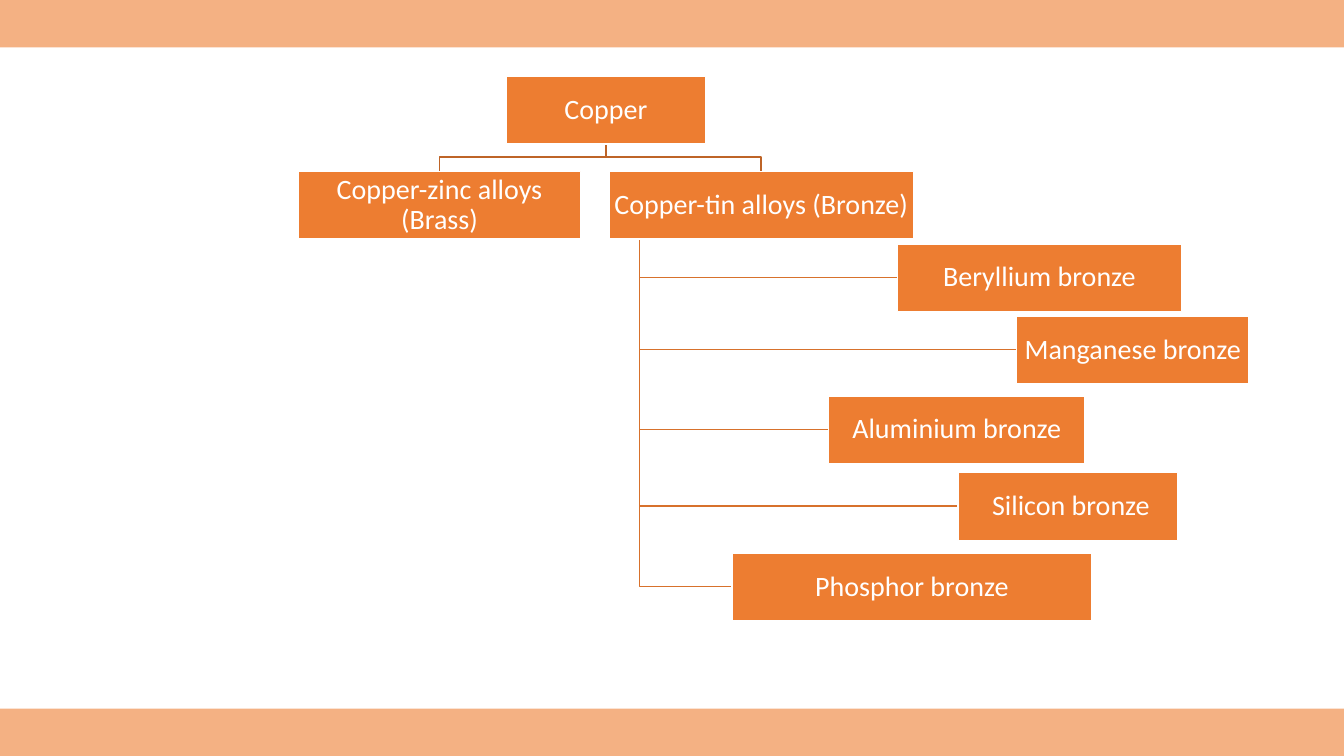
from pptx import Presentation
from pptx.dml.color import RGBColor
from pptx.enum.shapes import MSO_SHAPE
from pptx.enum.text import MSO_ANCHOR, PP_ALIGN
from pptx.util import Inches, Pt

prs = Presentation()
prs.slide_width, prs.slide_height = Inches(13.33), Inches(7.5)
s = prs.slides.add_slide(prs.slide_layouts[6])

# The slide is a grid of 1333 columns by 750 rows
COLS, ROWS = 1333, 750
CELL = prs.slide_height // ROWS
BAND_H, BOX_H = 47, 67
ROOT_Y, ALLOY_Y = 76, 170

TEXT_FRAME = dict(word_wrap=True, vertical_anchor=MSO_ANCHOR.MIDDLE,
                  margin_left=CELL, margin_right=CELL,
                  margin_top=CELL, margin_bottom=CELL)
PARAGRAPH = dict(alignment=PP_ALIGN.CENTER, line_spacing=0.9)
FONT = dict(name="Calibri", size=Pt(20))


def paint(fmt, color):
    """Give a fill, or the fill of a line, one solid colour."""
    fmt.solid()
    fmt.fore_color.rgb = RGBColor.from_string(color)


def add_box(x, y, w, h, color):
    sp = s.shapes.add_shape(MSO_SHAPE.RECTANGLE, *(v * CELL for v in (x, y, w, h)))
    sp.shadow.inherit = False
    paint(sp.fill, color)
    sp.line.fill.background()
    return sp


for y in (0, ROWS - BAND_H):
    add_box(0, y, COLS, BAND_H, "F4B183")

# Text, left, top, width
root = ("Copper", 502, ROOT_Y, 198)
alloys = [
    ("Copper-zinc alloys (Brass)", 296, ALLOY_Y, 280),
    ("Copper-tin alloys (Bronze)", 604, ALLOY_Y, 302),
]
bronzes = [
    ("Beryllium bronze", 890, 242, 282),
    ("Manganese bronze", 1008, 314, 231),
    ("Aluminium bronze", 822, 393, 254),
    (" Silicon bronze", 950, 469, 218),
    ("Phosphor bronze", 726, 549, 357),
]

# Elbows: the bronzes hang from a trunk one tenth into the bronze box
trunk_x = alloys[1][1] + alloys[1][3] // 10
root_x = root[1] + root[3] // 2
root_end = ROOT_Y + BOX_H
mid_y = (root_end + ALLOY_Y) // 2
elbows = []
for text, x, y, w in reversed(bronzes):
    side_y = y + BOX_H // 2
    elbows.append(("D7712C", [(trunk_x, ALLOY_Y + BOX_H), (trunk_x, side_y), (x, side_y)]))
for text, x, y, w in reversed(alloys):
    alloy_x = x + w // 2
    elbows.append(("BE6427", [(root_x, root_end), (root_x, mid_y),
                              (alloy_x, mid_y), (alloy_x, y)]))

for color, points in elbows:
    builder = s.shapes.build_freeform(*points[0], scale=CELL)
    builder.add_line_segments(points[1:], close=False)
    sp = builder.convert_to_shape()
    sp.shadow.inherit = False
    sp.fill.background()
    paint(sp.line.fill, color)
    sp.line.width = Pt(1)

for text, x, y, w in [root, *alloys, *bronzes]:
    sp = add_box(x, y, w, BOX_H, "ED7D31")
    paint(sp.line.fill, "FFFFFF")
    sp.line.width = Pt(1)
    tf = sp.text_frame
    p = tf.paragraphs[0]
    r = p.add_run()
    r.text = text
    for target, values in ((tf, TEXT_FRAME), (p, PARAGRAPH), (r.font, FONT)):
        for name, value in values.items():
            setattr(target, name, value)
    paint(r.font.fill, "FFFFFF")

prs.save("out.pptx")
